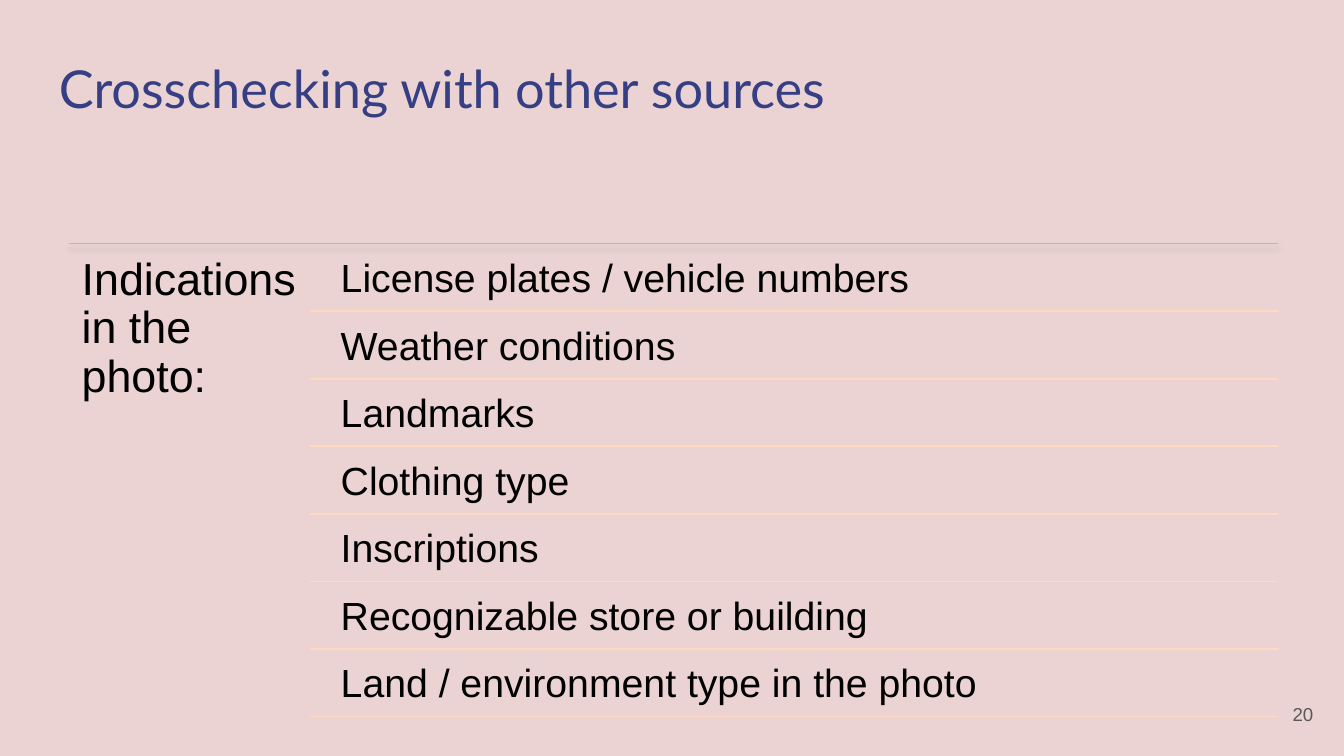
from lxml import etree
from pptx import Presentation
from pptx.dml.color import RGBColor
from pptx.enum.shapes import MSO_CONNECTOR
from pptx.enum.text import MSO_ANCHOR, PP_ALIGN
from pptx.oxml import parse_xml
from pptx.oxml.ns import nsdecls, qn
from pptx.util import Pt

PX = 4572
STRAIGHT = MSO_CONNECTOR.STRAIGHT
TOP, MIDDLE = MSO_ANCHOR.TOP, MSO_ANCHOR.MIDDLE
LEFT, RIGHT = PP_ALIGN.LEFT, PP_ALIGN.RIGHT

PINK = RGBColor(0xEB, 0xD3, 0xD3)
NAVY = RGBColor(0x36, 0x3F, 0x83)
BLACK = RGBColor(0x00, 0x00, 0x00)
GREY = RGBColor(0x59, 0x59, 0x59)
ORANGE = RGBColor(0xFF, 0xAB, 0x40)
PEACH = RGBColor(0xFF, 0xDA, 0xC0)

INDICATIONS = [
    "License plates / vehicle numbers",
    "Weather conditions",
    "Landmarks",
    "Clothing type",
    "Inscriptions",
    "Recognizable store or building",
    "Land / environment type in the photo",
]
SHADOW = (
    f'<a:effectLst {nsdecls("a")}><a:outerShdw blurRad="40000" dist="23000" '
    'dir="5400000" rotWithShape="0"><a:srgbClr val="000000">'
    '<a:alpha val="35000"/></a:srgbClr></a:outerShdw></a:effectLst>'
)


def add_text(page, box, text, size, color, font="Arial", inset=20,
             align=LEFT, anchor=TOP, spacing=0.9):
    """Place one paragraph in a box of left, top, width and height."""
    frame = page.shapes.add_textbox(*(n * PX for n in box)).text_frame
    frame.word_wrap = True
    frame.vertical_anchor = anchor
    frame.margin_left = frame.margin_right = inset * PX
    frame.margin_top = frame.margin_bottom = inset * PX
    para = frame.paragraphs[0]
    para.text = text
    para.alignment = align
    para.line_spacing = spacing
    para.font.name = font
    para.font.size = Pt(size)
    para.font.color.rgb = color


def add_rule(page, left, right, y, color, shadow=False):
    """Draw a thin horizontal line, with a soft shadow if asked."""
    rule = page.shapes.add_connector(
        STRAIGHT, left * PX, y * PX, right * PX, y * PX)
    rule.line.color.rgb = color
    rule.line.width = Pt(0.75)
    properties = rule._element.spPr
    if shadow:
        properties.append(parse_xml(SHADOW))
    else:
        etree.SubElement(properties, qn("a:effectLst"))


def add_indications(page, box, heading, items):
    """Set a heading beside a list of ruled rows."""
    left, top, width, height = box
    right = left + width
    heading_width = width // 5
    rows_left = left + heading_width
    pitch = (height - 6) / len(items)
    add_rule(page, left, right, top, ORANGE, shadow=True)
    add_text(page, (left, top, heading_width, height), heading, 24, BLACK)
    for index, item in enumerate(items):
        row_top = top + 5 + round(index * pitch)
        row_box = (rows_left + 27, row_top, right - rows_left - 27, 96)
        add_text(page, row_box, item, 21, BLACK, inset=18)
        add_rule(page, rows_left, right, row_top + 96, PEACH)


def build_page(deck):
    """Add the slide on checking a photo against other sources."""
    page = deck.slides.add_slide(deck.slide_layouts[6])
    page.background.fill.solid()
    page.background.fill.fore_color.rgb = PINK
    add_text(page, (68, 74, 1488, 126), "Crosschecking with other sources",
             28, NAVY, font="Lato")
    add_indications(page, (102, 362, 1800, 710),
                    "Indications in the photo:", INDICATIONS)
    add_text(page, (1854, 1020, 120, 86), "20", 10, GREY,
             align=RIGHT, anchor=MIDDLE, spacing=1.0)


def main():
    """Build and save the deck."""
    deck = Presentation()
    deck.slide_width = 2000 * PX
    deck.slide_height = 1125 * PX
    build_page(deck)
    deck.save("out.pptx")


if __name__ == "__main__":
    main()
